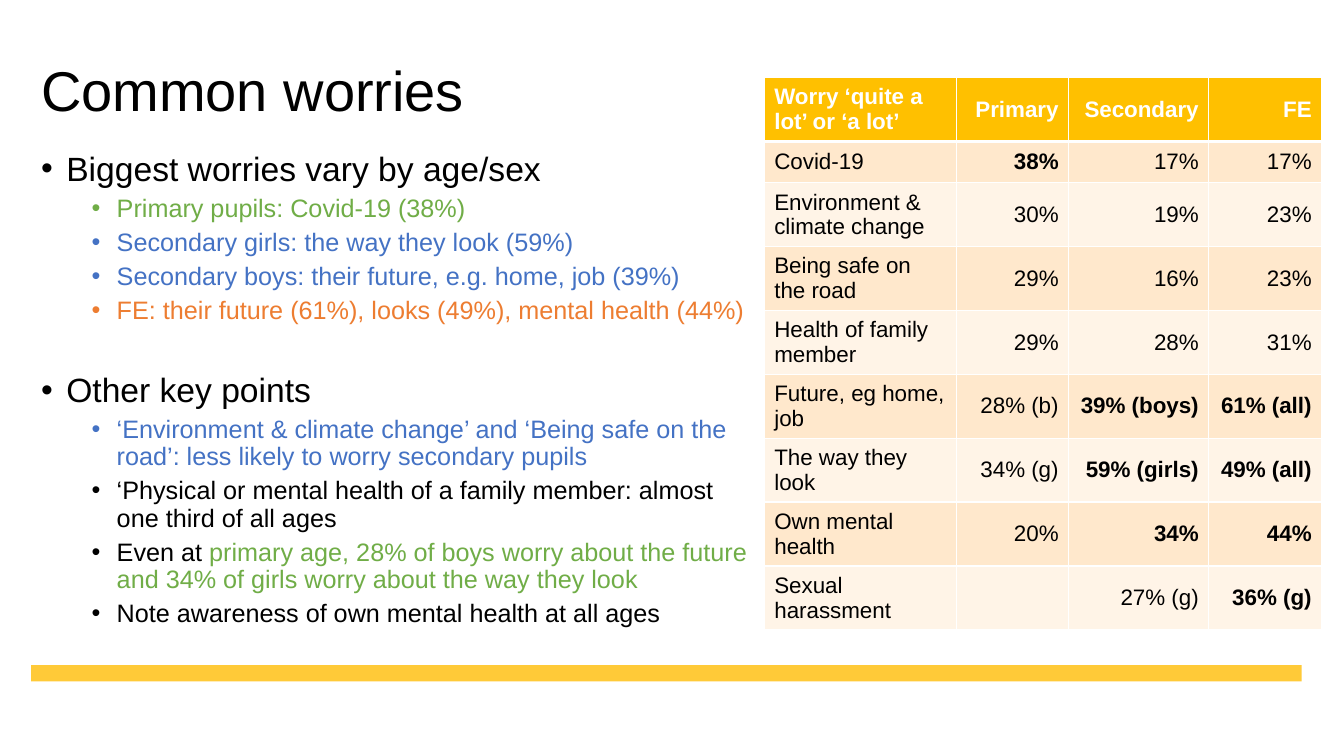
import pptx
import pptx.dml.color
import pptx.enum.shapes
import pptx.enum.text
import pptx.oxml
import pptx.oxml.ns
import pptx.util
from lxml import etree

Inches, Pt = pptx.util.Inches, pptx.util.Pt
RGBColor = pptx.dml.color.RGBColor
PP_ALIGN, ANCHOR = pptx.enum.text.PP_ALIGN, pptx.enum.text.MSO_ANCHOR
qn = pptx.oxml.ns.qn

BLACK = RGBColor(0x00, 0x00, 0x00)
WHITE = RGBColor(0xFF, 0xFF, 0xFF)
GREEN = RGBColor(0x70, 0xAD, 0x47)
BLUE = RGBColor(0x44, 0x72, 0xC4)
ORANGE = RGBColor(0xED, 0x7D, 0x31)
BAR_YELLOW = RGBColor(0xFF, 0xCA, 0x38)
HEADER_GOLD = RGBColor(0xFF, 0xC0, 0x00)
BANDS = (RGBColor(0xFF, 0xE8, 0xCC), RGBColor(0xFF, 0xF4, 0xE7))

# Bullet groups: heading, space before it, then points made of (text, colour) spans
GROUPS = [
    ("Biggest worries vary by age/sex", 0, [
        [("Primary pupils: Covid-19 (38%)", GREEN)],
        [("Secondary girls: the way they look (59%)", BLUE)],
        [("Secondary boys: their future, e.g. home, job (39%)", BLUE)],
        [("FE: their future (61%), looks (49%), mental health (44%)", ORANGE)],
    ]),
    ("Other key points", 34.5, [
        [("‘Environment & climate change’ and ‘Being safe on the road’: "
          "less likely to worry secondary pupils", BLUE)],
        [("‘Physical or mental health of a family member: almost one third of all ages", BLACK)],
        [("Even at ", BLACK),
         ("primary age, 28% of boys worry about the future "
          "and 34% of girls worry about the way they look", GREEN)],
        [("Note awareness of own mental health at all ages", BLACK)],
    ]),
]

WORRIES = [
    ("Worry ‘quite a lot’ or ‘a lot’", "Primary", "Secondary", "FE"),
    ("Covid-19", "38%", "17%", "17%"),
    ("Environment & climate change", "30%", "19%", "23%"),
    ("Being safe on the road", "29%", "16%", "23%"),
    ("Health of family member", "29%", "28%", "31%"),
    ("Future, eg home, job", "28% (b)", "39% (boys)", "61% (all)"),
    ("The way they look", "34% (g)", "59% (girls)", "49% (all)"),
    ("Own mental health", "20%", "34%", "44%"),
    ("Sexual harassment", "", "27% (g)", "36% (g)"),
]
BOLD_CELLS = {(1, 1), (5, 2), (5, 3), (6, 2), (6, 3), (7, 2), (7, 3), (8, 3)}
COLUMN_WIDTHS = (1.91, 1.11, 1.39, 1.12)
ROW_HEIGHT = 0.41


def apply_format(target, values):
    for name, value in values.items():
        setattr(target, name, value)


def add_span(para, text, size, color, bold=False):
    span = para.add_run()
    span.text = text
    apply_format(span.font, {"name": "Arial", "size": Pt(size), "bold": bold})
    span.font.color.rgb = color


def add_text_box(page, left, top, width, height, anchor):
    box = page.shapes.add_textbox(Inches(left), Inches(top), Inches(width), Inches(height))
    apply_format(box.text_frame, {"word_wrap": True, "vertical_anchor": anchor})
    return box.text_frame


def add_bar(page, left, top, width, height):
    bar = page.shapes.add_shape(pptx.enum.shapes.MSO_SHAPE.RECTANGLE,
                                Inches(left), Inches(top), Inches(width), Inches(height))
    bar.shadow.inherit = False
    bar.fill.solid()
    bar.fill.fore_color.rgb = BAR_YELLOW
    bar.line.fill.background()


def add_title(page, left, top, width, height):
    para = add_text_box(page, left, top, width, height, ANCHOR.MIDDLE).paragraphs[0]
    para.line_spacing = 0.9
    add_span(para, "Common worries", 40, BLACK)


def add_bullet(para, level, indent, space_before):
    props = para._p.get_or_add_pPr()
    props.set("marL", str(Inches(indent)))
    props.set("indent", str(Inches(-0.25)))
    etree.SubElement(props, qn("a:buFont")).set("typeface", "Arial")
    etree.SubElement(props, qn("a:buChar")).set("char", "•")
    apply_format(para, {"level": level, "line_spacing": 0.9, "space_before": Pt(space_before)})


def add_bullets(page, left, top, width, height):
    frame = add_text_box(page, left, top, width, height, ANCHOR.TOP)
    para = frame.paragraphs[0]
    for number, (heading, gap, points) in enumerate(GROUPS):
        if number:
            para = frame.add_paragraph()
        add_bullet(para, 0, 0.25, gap)
        add_span(para, heading, 24, BLACK)
        for point in points:
            para = frame.add_paragraph()
            add_bullet(para, 1, 0.75, 5)
            for text, color in point:
                add_span(para, text, 18, color)


def add_borders(cell, widths):
    props = cell._tc.get_or_add_tcPr()
    for side, width in widths.items():
        line = etree.SubElement(props, qn("a:ln" + side), w=str(Pt(width)))
        fill = etree.SubElement(line, qn("a:solidFill"))
        etree.SubElement(fill, qn("a:srgbClr")).set("val", str(WHITE))


def add_worry_table(page, left, top, width, height):
    table = page.shapes.add_table(len(WORRIES), len(COLUMN_WIDTHS), Inches(left), Inches(top),
                                  Inches(width), Inches(height)).table
    apply_format(table, {"first_row": False, "horz_banding": False})
    for column, column_width in zip(table.columns, COLUMN_WIDTHS):
        column.width = Inches(column_width)
    for r, values in enumerate(WORRIES):
        table.rows[r].height = Inches(ROW_HEIGHT)
        header = r == 0
        for c, text in enumerate(values):
            cell = table.cell(r, c)
            cell.vertical_anchor = ANCHOR.MIDDLE
            # A thick rule separates the header from the first row
            add_borders(cell, {"L": 1, "R": 1, "T": 3 if r == 1 else 1, "B": 3 if header else 1})
            cell.fill.solid()
            cell.fill.fore_color.rgb = HEADER_GOLD if header else BANDS[(r - 1) % 2]
            para = cell.text_frame.paragraphs[0]
            para.alignment = PP_ALIGN.RIGHT if c else PP_ALIGN.LEFT
            if text:
                add_span(para, text, 16, WHITE if header else BLACK,
                         header or (r, c) in BOLD_CELLS)


def main():
    deck = pptx.Presentation()
    apply_format(deck, {"slide_width": Inches(13.33), "slide_height": Inches(7.5)})
    page = deck.slides.add_slide(deck.slide_layouts[6])
    add_bar(page, 0.31, 6.6, 12.6, 0.16)
    add_title(page, 0.31, 0.4, 12.6, 1.06)
    add_bullets(page, 0.31, 1.46, 7.26, 5.3)
    add_worry_table(page, 7.58, 0.77, sum(COLUMN_WIDTHS), 5.47)
    deck.save("out.pptx")


if __name__ == "__main__":
    main()
